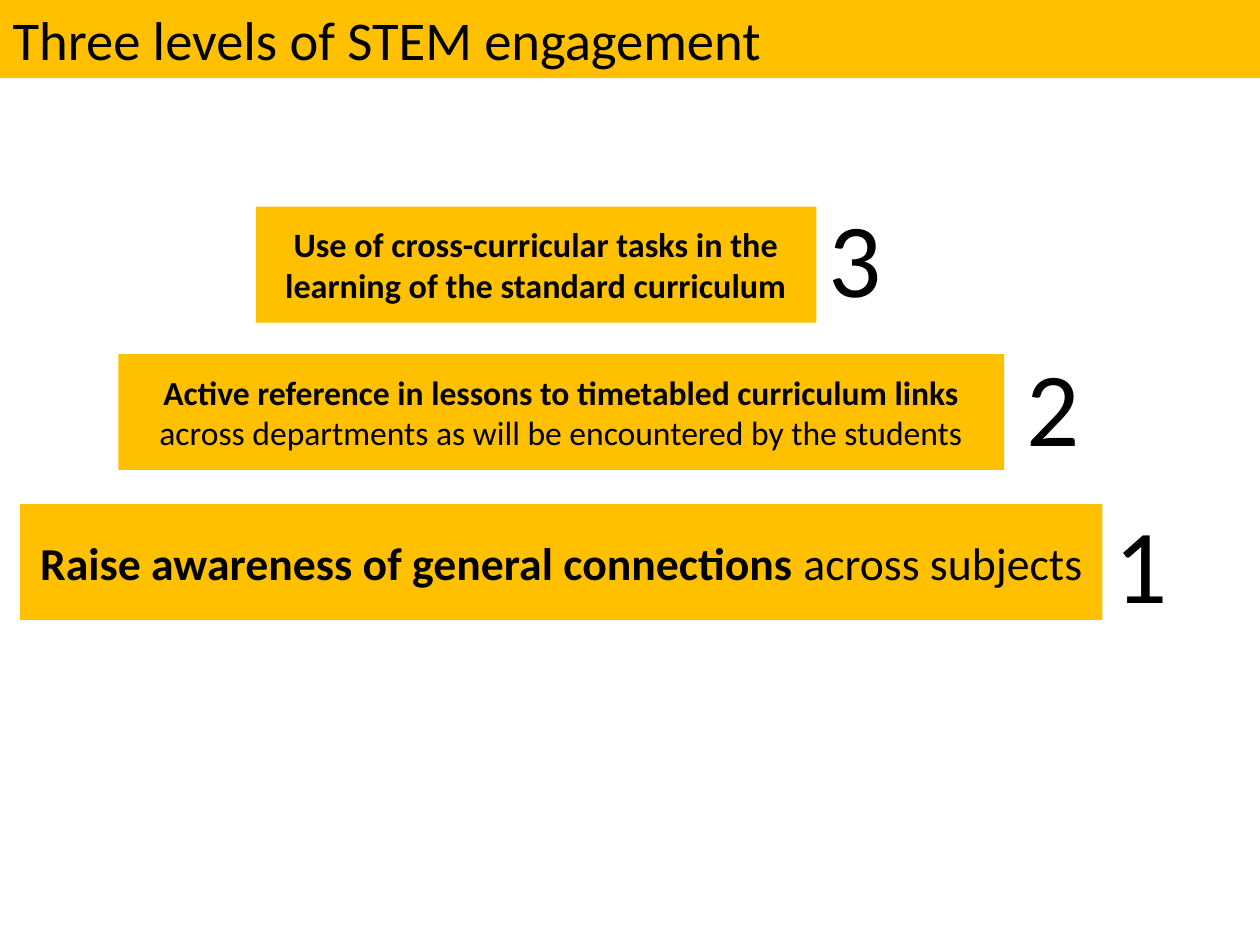
from dataclasses import dataclass

from pptx import Presentation
from pptx.dml.color import RGBColor
from pptx.enum.shapes import MSO_SHAPE
from pptx.enum.text import MSO_ANCHOR, MSO_AUTO_SIZE, PP_ALIGN
from pptx.util import Pt

RECT = MSO_SHAPE.RECTANGLE
MIDDLE, TOP = MSO_ANCHOR.MIDDLE, MSO_ANCHOR.TOP
LEFT, CENTER = PP_ALIGN.LEFT, PP_ALIGN.CENTER
FIXED = MSO_AUTO_SIZE.NONE


@dataclass(frozen=True)
class Theme:
    font: str = "Calibri"
    gold: RGBColor = RGBColor(0xFF, 0xC0, 0x00)
    ink: RGBColor = RGBColor(0, 0, 0)
    title: float = 31.2
    digit: float = 60


THEME = Theme()
BAR_H = 66.24
DIGIT_W, DIGIT_H = 73.44, 79.92

# Digit, bar left, top and width, digit left and top, type size, bold and plain text
LEVELS = [
    ("1", (11.52, 288, 618.48), (630, 281.52), 26.1,
     "Raise awareness of general connections", " across subjects"),
    ("2", (67.68, 202.32, 506.16), (579.6, 191.52), 19.2,
     "Active reference in lessons to timetabled curriculum links",
     " across departments as will be encountered by the students"),
    ("3", (146.16, 118.08, 320.4), (466.56, 106.56), 19.5,
     "Use of cross-curricular tasks in the learning of the standard curriculum", ""),
]


def assign(item, values):
    for name, value in values.items():
        setattr(item, name, value)


def place(shape, box):
    names = ("left", "top", "width", "height")
    assign(shape, {name: Pt(value) for name, value in zip(names, box)})


def paint(shape):
    shape.fill.solid()
    shape.fill.fore_color.rgb = THEME.gold
    shape.line.fill.background()


def write(shape, runs, size, align, anchor):
    """Fill a shape with one paragraph of (text, bold) runs."""
    frame = shape.text_frame
    assign(frame, {"word_wrap": True, "auto_size": FIXED, "vertical_anchor": anchor})
    para = frame.paragraphs[0]
    para.alignment = align
    for text, bold in runs:
        run = para.add_run()
        run.text = text
        assign(run.font, {"name": THEME.font, "size": Pt(size), "bold": bold})
        run.font.color.rgb = THEME.ink


def add_title(slide, box, text):
    title = slide.shapes.title
    place(title, box)
    paint(title)
    write(title, [(text, False)], THEME.title, LEFT, MIDDLE)


def add_bar(slide, box, runs, size):
    bar = slide.shapes.add_shape(RECT, *map(Pt, box))
    bar.shadow.inherit = False
    paint(bar)
    write(bar, runs, size, CENTER, MIDDLE)


def add_digit(slide, box, text):
    label = slide.shapes.add_textbox(*map(Pt, box))
    write(label, [(text, False)], THEME.digit, LEFT, TOP)


def main():
    deck = Presentation()
    assign(deck, {"slide_width": Pt(720), "slide_height": Pt(540)})
    slide = deck.slides.add_slide(deck.slide_layouts[5])
    add_title(slide, (0, 0, 720, 44.64), "Three levels of STEM engagement")
    for digit, bar, spot, size, strong, plain in LEVELS:
        runs = [(strong, True)] + ([(plain, False)] if plain else [])
        add_bar(slide, (*bar, BAR_H), runs, size)
        add_digit(slide, (*spot, DIGIT_W, DIGIT_H), digit)
    deck.save("out.pptx")


if __name__ == "__main__":
    main()
